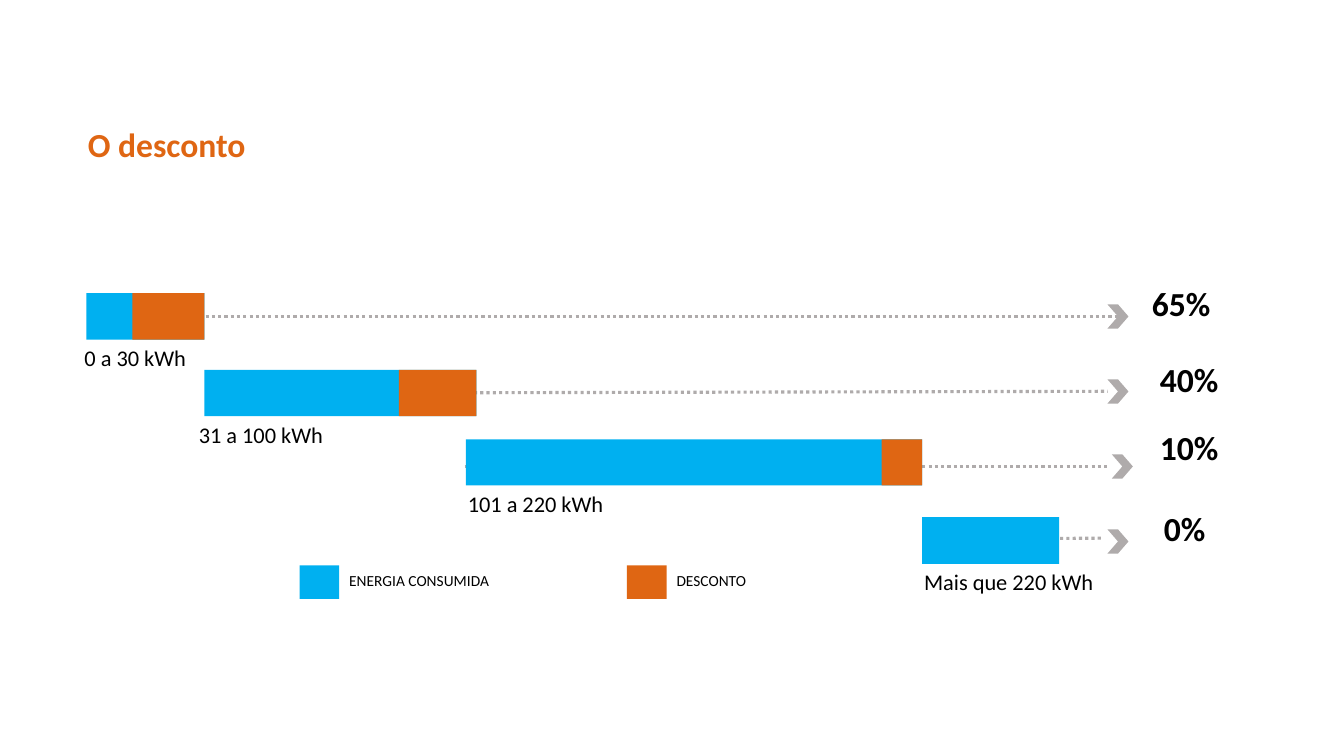
from dataclasses import dataclass

from lxml.etree import SubElement
from pptx import Presentation
from pptx.dml.color import RGBColor
from pptx.enum.dml import MSO_LINE_DASH_STYLE as Dash
from pptx.enum.shapes import MSO_CONNECTOR as Connector, MSO_SHAPE as Preset
from pptx.enum.text import MSO_ANCHOR as Anchor, PP_ALIGN as Align
from pptx.oxml.ns import qn
from pptx.slide import Slide
from pptx.text.text import TextFrame
from pptx.util import Cm, Pt

BLUE, ORANGE, GRAY, BLACK = "00B0F0", "DF6613", "AFABAB", "000000"
CHEVRON_TOP, CHEVRON_STEP = 7.67, 1.89
CHEVRON_WIDTH, CHEVRON_HEIGHT = 0.53, 0.61


@dataclass
class Tier:
    label: str
    label_left: float
    label_width: float
    left: float
    top: float
    width: float
    height: float
    discount_width: float
    arrow_start_x: float
    arrow_start_y: float
    arrow_end_x: float
    arrow_end_y: float
    chevron_left: float
    percent: str
    percent_left: float
    percent_top: float


@dataclass
class LegendItem:
    label: str
    color: str
    left: float
    label_width: float


TIERS = [
    Tier("0 a 30 kWh", 1.88, 3.1, 2.18, 7.39, 2.97, 1.17, 1.81,
         2.18, 7.98, 28.17, 7.98, 27.91, "65%", 28.78, 7.01),
    Tier("31 a 100 kWh", 4.76, 3.68, 5.15, 9.32, 6.86, 1.17, 1.96,
         5.94, 9.91, 27.91, 9.86, 27.91, "40%", 28.98, 8.92),
    Tier("101 a 220 kWh", 11.54, 3.96, 11.74, 11.07, 11.5, 1.16, 1.02,
         11.71, 11.76, 27.89, 11.76, 28.02, "10%", 28.98, 10.64),
    Tier("Mais que 220 kWh", 23.04, 4.83, 23.24, 13.03, 3.45, 1.18, 0,
         23.24, 13.59, 27.79, 13.56, 27.91, "0%", 29.08, 12.67),
]
LEGEND = [
    LegendItem("ENERGIA CONSUMIDA", BLUE, 7.55, 4.06),
    LegendItem("DESCONTO", ORANGE, 15.8, 2.29),
]


def rgb(color: str) -> RGBColor:
    return RGBColor.from_string(color)


def write(frame: TextFrame, text: str, size: float, color: str = BLACK,
          bold: bool = False) -> None:
    para = frame.paragraphs[0]
    para.alignment = Align.LEFT
    span = para.add_run()
    span.text = text
    span.font.name = "Calibri"
    span.font.size = Pt(size)
    span.font.bold = bold
    span.font.color.rgb = rgb(color)


def add_text(page: Slide, text: str, left: float, top: float, width: float,
             height: float, size: float, bold: bool = False) -> None:
    box = page.shapes.add_textbox(Cm(left), Cm(top), Cm(width), Cm(height))
    box.text_frame.word_wrap = True
    write(box.text_frame, text, size, bold=bold)


def add_block(page: Slide, preset: Preset, left: float, top: float,
              width: float, height: float, color: str) -> None:
    block = page.shapes.add_shape(preset, Cm(left), Cm(top), Cm(width), Cm(height))
    block.shadow.inherit = False
    block.fill.solid()
    block.fill.fore_color.rgb = rgb(color)
    block.line.fill.background()


def add_arrow(page: Slide, tier: Tier, chevron_top: float) -> None:
    line = page.shapes.add_connector(
        Connector.STRAIGHT, Cm(tier.arrow_start_x), Cm(tier.arrow_start_y),
        Cm(tier.arrow_end_x), Cm(tier.arrow_end_y))
    line.line.color.rgb = rgb(GRAY)
    line.line.width = Pt(2.25)
    line.line.dash_style = Dash.ROUND_DOT
    SubElement(line._element.spPr, qn("a:effectLst"))
    add_block(page, Preset.CHEVRON, tier.chevron_left, chevron_top,
              CHEVRON_WIDTH, CHEVRON_HEIGHT, GRAY)


def add_tier(page: Slide, tier: Tier, chevron_top: float) -> None:
    add_arrow(page, tier, chevron_top)
    add_block(page, Preset.RECTANGLE, tier.left, tier.top, tier.width,
              tier.height, BLUE)
    if tier.discount_width:
        add_block(page, Preset.RECTANGLE,
                  tier.left + tier.width - tier.discount_width, tier.top,
                  tier.discount_width, tier.height, ORANGE)
    add_text(page, tier.label, tier.label_left, tier.top + tier.height - 0.01,
             tier.label_width, 0.94, 16)
    add_text(page, tier.percent, tier.percent_left, tier.percent_top,
             2.16, 1.27, 24, bold=True)


def add_legend_item(page: Slide, item: LegendItem) -> None:
    add_block(page, Preset.RECTANGLE, item.left, 14.25, 1, 0.84, item.color)
    add_text(page, item.label, item.left + 1, 14.26, item.label_width, 0.74, 11)


def add_title(page: Slide, text: str) -> None:
    title = page.shapes.title
    title.left, title.top = Cm(1.96), Cm(3)
    title.width, title.height = Cm(17.73), Cm(1.27)
    title.text_frame.vertical_anchor = Anchor.TOP
    title.text_frame.word_wrap = True
    write(title.text_frame, text, 24, ORANGE, bold=True)


def main() -> None:
    deck = Presentation()
    deck.slide_width, deck.slide_height = Cm(33.87), Cm(19.05)
    page = deck.slides.add_slide(deck.slide_layouts.get_by_name("Title Only"))
    add_title(page, "O desconto")
    for index, tier in enumerate(TIERS):
        add_tier(page, tier, CHEVRON_TOP + index * CHEVRON_STEP)
    for item in LEGEND:
        add_legend_item(page, item)
    deck.save("out.pptx")


if __name__ == "__main__":
    main()
